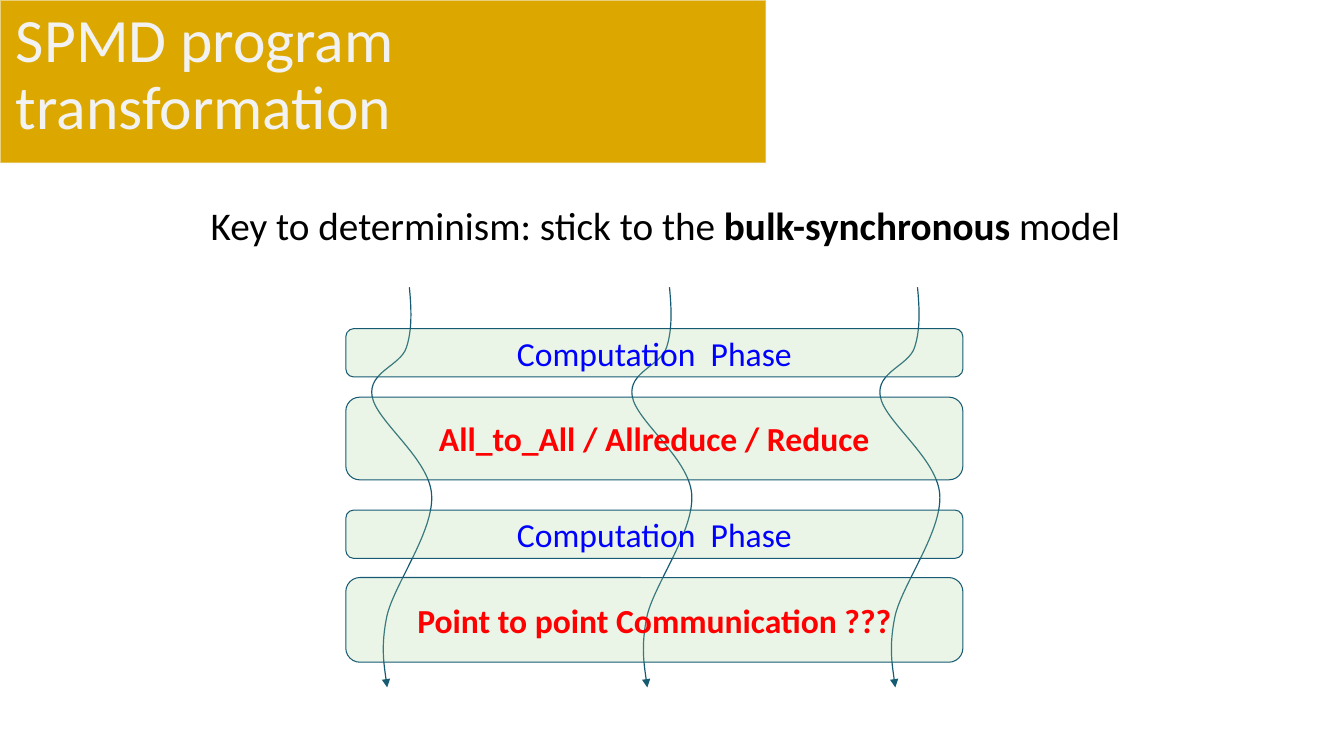
from lxml import etree
from pptx import Presentation
from pptx import util as u
from pptx.dml.color import RGBColor
from pptx.enum import shapes, text
from pptx.oxml.ns import qn

COLORS = {
    "banner": "DCA800", "banner_edge": "F9F9F9", "title": "F2F2F2",
    "body": "000000", "outline": "175B73", "phase": "A9D89D",
    "compute": "0000FF", "communicate": "FF0000",
}
THREAD_START = (0.37, 0)
THREAD_CURVES = [
    ((0.39, 0.21), (0.4, 0.42), (0.34, 0.6)),
    ((0.28, 0.78), (-0.04, 0.84), (0, 1.08)),
    ((0.04, 1.33), (0.56, 1.69), (0.59, 2.05)),
    ((0.62, 2.41), (0.23, 2.93), (0.15, 3.25)),
    ((0.08, 3.57), (0.15, 3.97), (0.15, 3.97)),
]
THREAD_LEFTS = [3.69, 6.27, 8.73]
PHASES = [
    ("All_to_All / Allreduce / Reduce", 3.94, 0.82, "communicate"),
    ("Computation  Phase", 3.26, 0.48, "compute"),
    ("Point to point Communication ???", 5.73, 0.84, "communicate"),
    ("Computation  Phase", 5.06, 0.48, "compute"),
]


def color(name):
    """Return the named palette colour."""
    return RGBColor.from_string(COLORS[name])


def set_alpha(fill_owner, percent):
    """Make the solid fill inside an XML element partly transparent."""
    tint = fill_owner.find(qn("a:solidFill"))[0]
    etree.SubElement(tint, qn("a:alpha")).set("val", str(percent * 1000))


def style_shape(shape, fill, line, width):
    """Give a shape its fill and outline without a shadow."""
    shape.shadow.inherit = False
    if fill:
        shape.fill.solid()
        shape.fill.fore_color.rgb = color(fill)
    else:
        shape.fill.background()
    shape.line.color.rgb = color(line)
    shape.line.width = u.Pt(width)


def style_span(span, size, name, bold=False):
    """Format one run of text."""
    span.font.name = "Calibri"
    span.font.size = u.Pt(size)
    span.font.bold = bold
    span.font.color.rgb = color(name)


def add_text_box(page, left, top, width, height, anchor):
    """Add a wrapping text box and return it with its first paragraph."""
    box = page.shapes.add_textbox(*map(u.Inches, (left, top, width, height)))
    box.text_frame.word_wrap = True
    box.text_frame.vertical_anchor = anchor
    para = box.text_frame.paragraphs[0]
    para.line_spacing = 0.9
    return box, para


def add_banner(page, left, top, width, height):
    """Draw the gold banner with the slide title."""
    banner = page.shapes.add_shape(
        shapes.MSO_SHAPE.FLOWCHART_PROCESS,
        *map(u.Inches, (left, top, width, height)))
    style_shape(banner, "banner", "banner_edge", 1.35)
    set_alpha(banner.line._get_or_add_ln(), 50)
    _, para = add_text_box(page, left + 0.06, top + 0.03, width - 0.09,
                           height - 0.17, text.MSO_ANCHOR.MIDDLE)
    para.text = "SPMD program transformation"
    style_span(para.runs[0], 44, "title")


def add_key_point(page, left, top, width, height):
    """Write the key sentence with its bold term."""
    box, para = add_text_box(page, left, top, width, height,
                             text.MSO_ANCHOR.TOP)
    box.text_frame.margin_left = u.Inches(0.35)
    for words, bold in (("Key to determinism: stick to the ", False),
                        ("bulk-synchronous ", True), ("model", False)):
        span = para.add_run()
        span.text = words
        style_span(span, 28, "body", bold)


def add_thread(page, left, top):
    """Draw one winding thread that ends in an arrowhead."""
    def place(point):
        return u.Inches(left + point[0]), u.Inches(top + point[1])

    builder = page.shapes.build_freeform(*place(THREAD_START))
    builder.add_line_segments([place(curve[-1]) for curve in THREAD_CURVES],
                              close=False)
    thread = builder.convert_to_shape()
    style_shape(thread, None, "outline", 0.85)
    segments = list(thread._element.iter(qn("a:lnTo")))
    for segment, curve in zip(segments, THREAD_CURVES):
        segment.tag = qn("a:cubicBezTo")
        segment.remove(segment[0])
        for x, y in curve:
            point = etree.SubElement(segment, qn("a:pt"))
            point.set("x", str(u.Inches(x)))
            point.set("y", str(u.Inches(y)))
    arrow = etree.SubElement(thread.line._get_or_add_ln(), qn("a:tailEnd"))
    arrow.set("type", "triangle")


def add_phase(page, left, top, width, height, label, name):
    """Draw one labelled phase bar."""
    bar = page.shapes.add_shape(
        shapes.MSO_SHAPE.ROUNDED_RECTANGLE,
        *map(u.Inches, (left, top, width, height)))
    style_shape(bar, "phase", "outline", 0.75)
    set_alpha(bar._element.spPr, 24)
    bar.text_frame.text = label
    bar.text_frame.vertical_anchor = text.MSO_ANCHOR.MIDDLE
    para = bar.text_frame.paragraphs[0]
    para.alignment = text.PP_ALIGN.CENTER
    style_span(para.runs[0], 24, name, name == "communicate")


def main():
    """Build and save the slide."""
    deck = Presentation()
    deck.slide_width, deck.slide_height = u.Inches(13.33), u.Inches(7.5)
    page = deck.slides.add_slide(deck.slide_layouts[6])
    add_banner(page, 0, 0, 7.6, 1.62)
    add_key_point(page, 1.74, 2, 10.68, 4.76)
    for left in THREAD_LEFTS:
        add_thread(page, left, 2.85)
    for label, top, height, name in PHASES:
        add_phase(page, 3.43, top, 6.12, height, label, name)
    deck.save("out.pptx")


if __name__ == "__main__":
    main()
